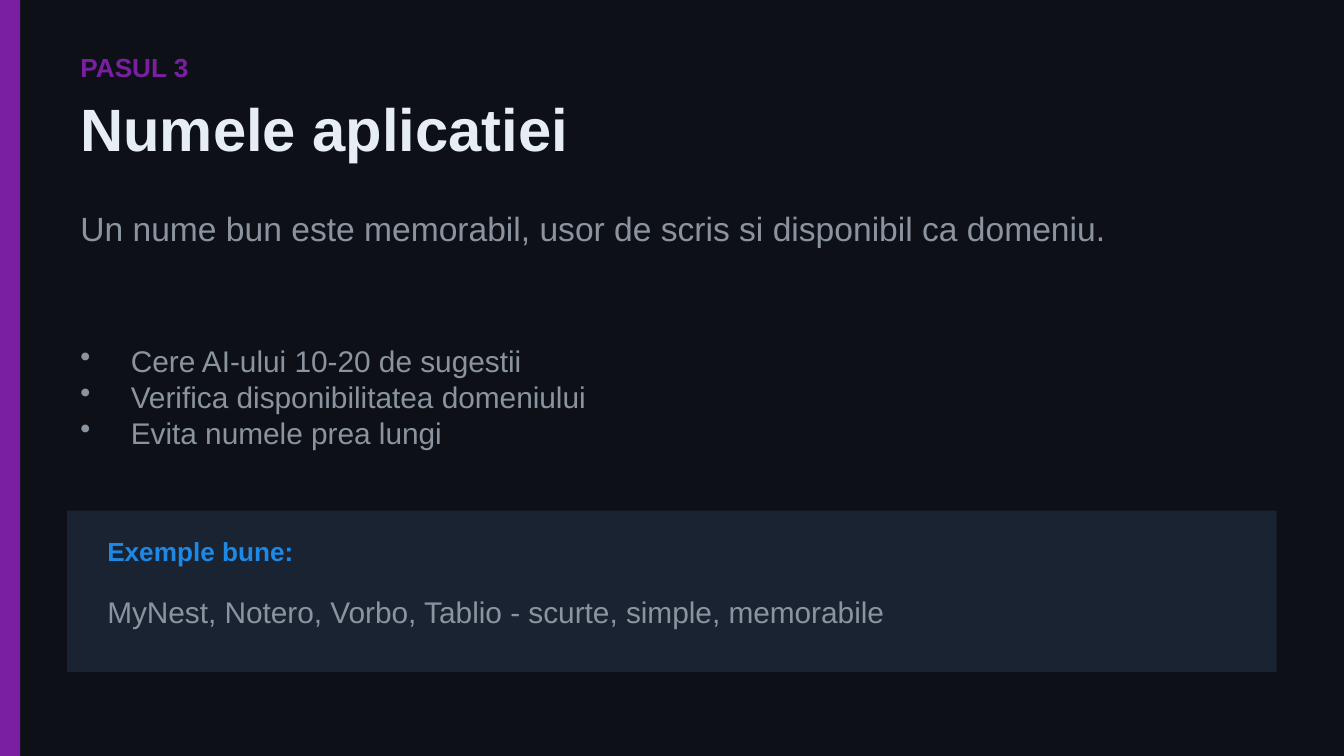
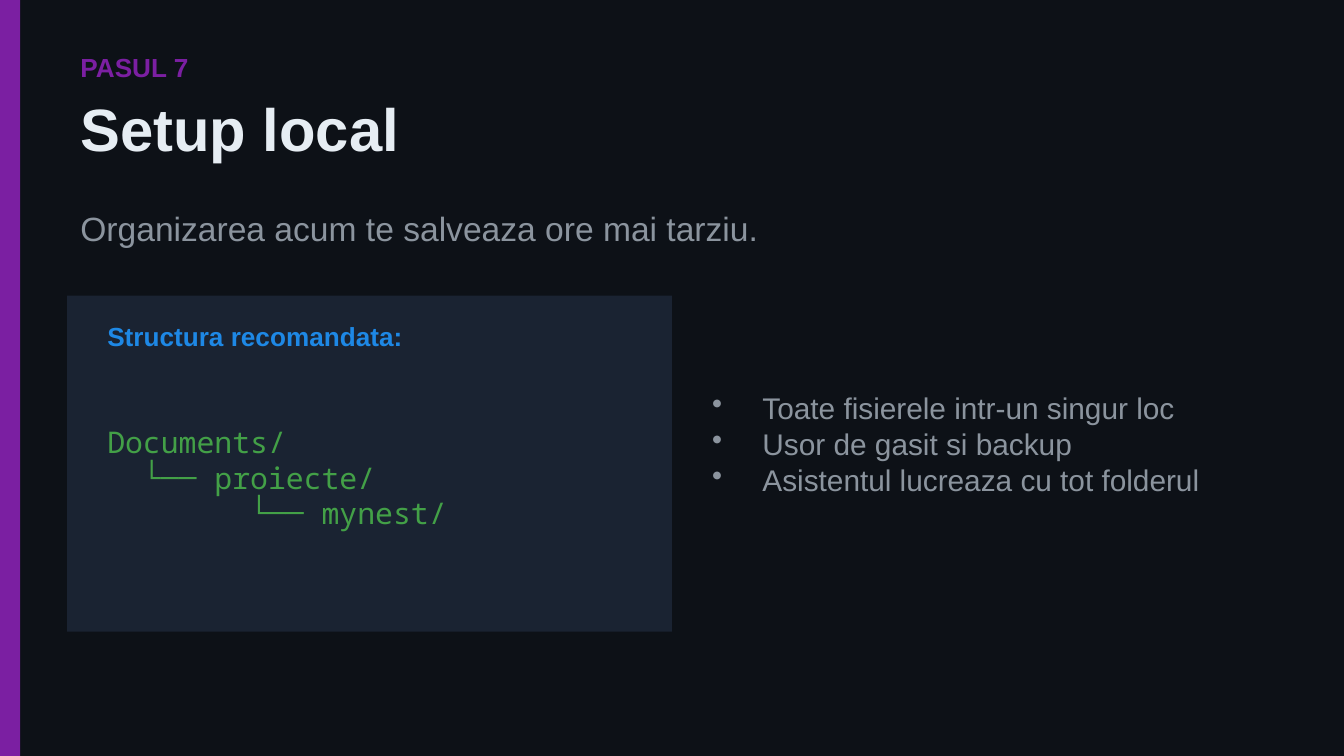
"""Build two dark step slides of an app-building course."""
from lxml import etree
from pptx import Presentation
from pptx.dml.color import RGBColor
from pptx.enum import shapes, text
from pptx.oxml import ns
from pptx.util import Inches, Pt

BACKGROUND = RGBColor(0x0D, 0x11, 0x17)
PANEL = RGBColor(0x1A, 0x23, 0x32)
PURPLE = RGBColor(0x7B, 0x1F, 0xA2)
WHITE = RGBColor(0xE6, 0xED, 0xF3)
GRAY = RGBColor(0x8B, 0x94, 0x9E)
BLUE = RGBColor(0x1E, 0x88, 0xE5)
GREEN = RGBColor(0x43, 0xA0, 0x47)
BODY_FONT = "Arial"
CODE_FONT = "Noto Sans Mono"
WIDTH = 10
HEIGHT = WIDTH * 9 / 16
MARGIN = 0.5
CONTENT_WIDTH = WIDTH - 2 * MARGIN
PANEL_PADDING = 0.2
BULLET_INDENT = Inches(3 / 8)


def add_bullet(paragraph):
    """Give a paragraph a round bullet with a hanging indent."""
    properties = paragraph._p.get_or_add_pPr()
    properties.set("marL", str(BULLET_INDENT))
    properties.set("indent", str(-BULLET_INDENT))
    etree.SubElement(properties, ns.qn("a:buSzPct")).set("val", "100000")
    etree.SubElement(properties, ns.qn("a:buChar")).set("char", "•")


def add_text(slide, box, lines, size=16, color=GRAY, bold=False, font=BODY_FONT, bullets=False):
    """Add a vertically centred text box with one paragraph per line."""
    frame = slide.shapes.add_textbox(*map(Inches, box)).text_frame
    frame.word_wrap = True
    frame.vertical_anchor = text.MSO_ANCHOR.MIDDLE
    for index, line in enumerate(lines):
        paragraph = frame.add_paragraph() if index else frame.paragraphs[0]
        if bullets:
            add_bullet(paragraph)
        run = paragraph.add_run()
        run.text = line
        run.font.name = font
        run.font.size = Pt(size)
        run.font.bold = bold
        run.font.color.rgb = color


def add_block(slide, box, color):
    """Add a flat filled rectangle."""
    shape = slide.shapes.add_shape(shapes.MSO_SHAPE.RECTANGLE, *map(Inches, box))
    shape.shadow.inherit = False
    shape.fill.solid()
    shape.fill.fore_color.rgb = color
    shape.line.fill.background()


def add_step_slide(presentation, step, title, summary):
    """Add a slide with the side band, step label, title and summary."""
    slide = presentation.slides.add_slide(presentation.slide_layouts[6])
    slide.background.fill.solid()
    slide.background.fill.fore_color.rgb = BACKGROUND
    add_block(slide, (0, 0, 0.15, HEIGHT), PURPLE)
    add_text(slide, (MARGIN, 0.3, 2, 0.4), [f"PASUL {step}"], size=14, color=PURPLE, bold=True)
    add_text(slide, (MARGIN, 0.65, CONTENT_WIDTH, 0.6), [title], size=32, color=WHITE, bold=True)
    add_text(slide, (MARGIN, 1.4, CONTENT_WIDTH, 0.6), [summary], size=18)
    return slide


def add_panel(slide, box, heading, lines, text_width, body_offset, body_height, **body_format):
    """Add a panel with a heading and body text placed inside its box."""
    left, top, _, _ = box
    text_left = left + PANEL_PADDING
    add_block(slide, box, PANEL)
    add_text(slide, (text_left, top + 0.1, text_width, 0.4), [heading],
             size=14, color=BLUE, bold=True)
    add_text(slide, (text_left, top + body_offset, text_width, body_height), lines, **body_format)


def build_name_slide(presentation):
    """Build the slide about choosing the app name."""
    slide = add_step_slide(presentation, 3, "Numele aplicatiei",
                           "Un nume bun este memorabil, usor de scris si disponibil ca domeniu.")
    add_text(slide, (MARGIN, 2.2, CONTENT_WIDTH, 1.5), [
        "Cere AI-ului 10-20 de sugestii",
        "Verifica disponibilitatea domeniului",
        "Evita numele prea lungi",
    ], bullets=True)
    add_panel(slide, (MARGIN, 3.8, CONTENT_WIDTH, 1.2), "Exemple bune:",
              ["MyNest, Notero, Vorbo, Tablio - scurte, simple, memorabile"], 8.6, 0.5, 0.5)


def build_setup_slide(presentation):
    """Build the slide about the local folder structure."""
    slide = add_step_slide(presentation, 7, "Setup local",
                           "Organizarea acum te salveaza ore mai tarziu.")
    add_panel(slide, (MARGIN, 2.2, 4.5, 2.5), "Structura recomandata:", [
        "Documents/",
        "  └── proiecte/",
        "        └── mynest/",
    ], 4, 0.6, 1.5, color=GREEN, font=CODE_FONT)
    add_text(slide, (5.2, 2.3, 4.3, 2), [
        "Toate fisierele intr-un singur loc",
        "Usor de gasit si backup",
        "Asistentul lucreaza cu tot folderul",
    ], bullets=True)


def main():
    """Create the presentation and save it."""
    presentation = Presentation()
    presentation.slide_width = Inches(WIDTH)
    presentation.slide_height = Inches(HEIGHT)
    build_name_slide(presentation)
    build_setup_slide(presentation)
    presentation.save("out.pptx")


if __name__ == "__main__":
    main()
